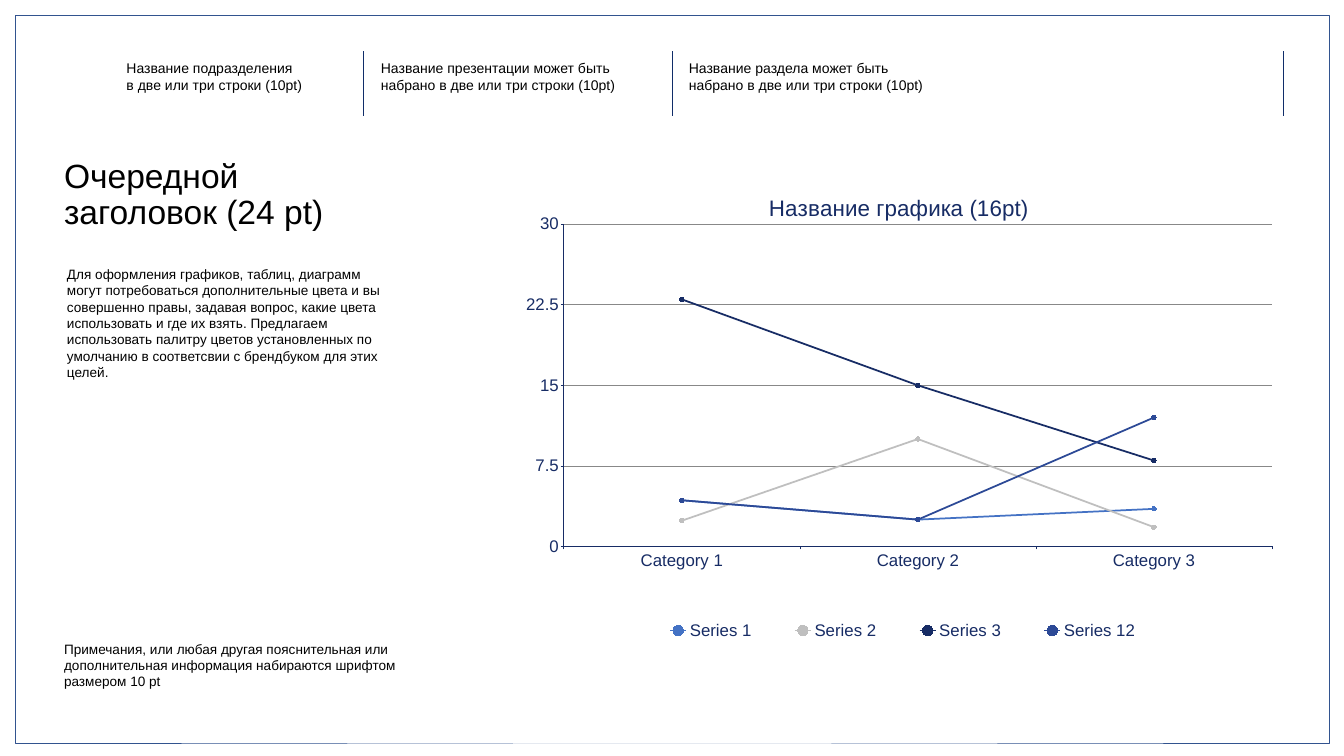
from lxml import etree
from pptx import Presentation
from pptx.chart.data import CategoryChartData
from pptx.dml.color import RGBColor
from pptx.enum.chart import (XL_CHART_TYPE as ChartType, XL_LEGEND_POSITION as LegendPosition,
                             XL_MARKER_STYLE as MarkerStyle, XL_TICK_LABEL_POSITION as LabelPosition,
                             XL_TICK_MARK as TickMark)
from pptx.enum.shapes import MSO_CONNECTOR as Connector, MSO_SHAPE as Shape
from pptx.enum.text import MSO_ANCHOR as Anchor, MSO_AUTO_SIZE as AutoSize, PP_ALIGN as Align
from pptx.oxml.ns import qn
from pptx.util import Inches, Pt

WIDTH, HEIGHT = Inches(26.67), Inches(15)
FONT = "Arial"
COLORS = {"paper": "FFFFFF", "text": "000000", "frame": "32538F", "rule": "102D69",
          "axis": "172C65", "grid": "888888"}
RULES = (27.03, 50.02, 95.5)
HEADERS = (
    (9.04, "Название подразделения\nв две или три строки (10pt)"),
    (27.97, "Название презентации может быть набрано в две или три строки (10pt)"),
    (50.88, "Название раздела может быть набрано в две или три строки (10pt)"),
)
TITLE = "Очередной\nзаголовок (24 pt)"
BODY = ("Для оформления графиков, таблиц, диаграмм могут потребоваться дополнительные цвета "
        "и вы совершенно правы, задавая вопрос, какие цвета использовать и где их взять. "
        "Предлагаем использовать палитру цветов установленных по умолчанию в соответсвии "
        "с брендбуком для этих целей.")
NOTE = ("Примечания, или любая другая пояснительная или дополнительная информация "
        "набираются шрифтом размером 10 pt")
CATEGORIES = ("Category 1", "Category 2", "Category 3")
SERIES = (
    ("Series 1", (4.3, 2.5, 3.5), "4472C4"),
    ("Series 2", (2.4, 10, 1.8), "BFBFBF"),
    ("Series 3", (23, 15, 8), "172C65"),
    ("Series 12", (4.3, 2.5, 12), "2C4996"),
)


def color(name):
    return RGBColor.from_string(COLORS.get(name, name))


def share(left, top, width, height):
    return (int(WIDTH * left / 100), int(HEIGHT * top / 100),
            int(WIDTH * width / 100), int(HEIGHT * height / 100))


def style_font(font, size, name):
    font.name, font.size, font.bold = FONT, Pt(size), False
    font.color.rgb = color(name)


def style_line(line, name, width):
    line.color.rgb = color(name)
    line.width = Pt(width)


def write_text(box, text, size, spacing=1.0):
    frame = box.text_frame
    frame.word_wrap = True
    frame.auto_size = AutoSize.NONE
    frame.vertical_anchor = Anchor.TOP
    frame.margin_left = frame.margin_right = Inches(0.1)
    frame.margin_top = frame.margin_bottom = Inches(0.1)
    para = frame.paragraphs[0]
    properties = para._p.get_or_add_pPr()
    properties.set("marL", "0")
    properties.set("indent", "0")
    etree.SubElement(properties, qn("a:buNone"))
    para.alignment = Align.LEFT
    para.line_spacing = spacing
    para.space_before = Pt(0)
    for number, line in enumerate(text.split("\n")):
        if number:
            para.add_line_break()
        span = para.add_run()
        span.text = line
        style_font(span.font, size, "text")


def fill_placeholder(box, area, text, size, spacing=1.0):
    box.left, box.top, box.width, box.height = share(*area)
    write_text(box, text, size, spacing)


def add_frame(page):
    frame = page.shapes.add_shape(Shape.RECTANGLE, *share(1.09, 2, 97.83, 96.27))
    frame.shadow.inherit = False
    frame.fill.solid()
    frame.fill.fore_color.rgb = color("paper")
    style_line(frame.line, "frame", 0.25)
    page.shapes._spTree.remove(frame._element)
    page.shapes._spTree.insert(2, frame._element)


def add_rule(page, position):
    left, top, _, bottom = share(position, 6.8, 0, 15.33)
    rule = page.shapes.add_connector(Connector.STRAIGHT, left, top, left, bottom)
    style_line(rule.line, "rule", 0.75)
    etree.SubElement(rule._element.spPr, qn("a:effectLst"))


def add_header(page, left, text):
    box = page.shapes.add_textbox(*share(left, 7.27, 18.49, 8))
    write_text(box, text, 20)


def set_layout(parent, index, area, inner=False):
    for old in parent.findall(qn("c:layout")):
        parent.remove(old)
    layout = etree.Element(qn("c:layout"))
    manual = etree.SubElement(layout, qn("c:manualLayout"))
    values = [("layoutTarget", "inner")] if inner else []
    values += [("xMode", "edge"), ("yMode", "edge")]
    values += list(zip("xywh", area))
    for tag, value in values:
        etree.SubElement(manual, qn("c:" + tag)).set("val", str(value))
    parent.insert(index, layout)


def style_axis(axis):
    axis.major_tick_mark = TickMark.OUTSIDE
    axis.minor_tick_mark = TickMark.NONE
    style_font(axis.tick_labels.font, 24, "axis")
    style_line(axis.format.line, "axis", 1)


def style_series(series, name):
    series.smooth = False
    style_line(series.format.line, name, 2.5)
    series.marker.style = MarkerStyle.CIRCLE
    series.marker.size = 6
    series.marker.format.fill.solid()
    series.marker.format.fill.fore_color.rgb = color(name)
    style_line(series.marker.format.line, name, 0.75)


def add_line_chart(page):
    data = CategoryChartData()
    data.categories = CATEGORIES
    for name, values, _ in SERIES:
        data.add_series(name, values)
    area = share(38.55, 23.47, 56.66, 61.8)
    chart = page.shapes.add_chart(ChartType.LINE_MARKERS, *area, data).chart
    style_font(chart.font, 10, "text")
    chart.has_title = True
    span = chart.chart_title.text_frame.paragraphs[0].add_run()
    span.text = "Название графика (16pt)"
    style_font(span.font, 32, "axis")
    chart.chart_title.include_in_layout = True
    chart.has_legend = True
    chart.legend.position = LegendPosition.BOTTOM
    chart.legend.include_in_layout = True
    style_font(chart.legend.font, 24, "axis")
    set_layout(chart.legend._element, 1, (0.15, 0.94, 0.71, 0.06))
    set_layout(chart._chartSpace.chart.plotArea, 0, (0.06, 0.1, 0.93, 0.69), inner=True)
    style_axis(chart.category_axis)
    chart.category_axis.tick_label_position = LabelPosition.LOW
    values = chart.value_axis
    style_axis(values)
    values.minimum_scale, values.maximum_scale, values.major_unit = 0, 30, 7.5
    values.tick_labels.number_format = "General"
    values.tick_labels.number_format_is_linked = False
    style_line(values.major_gridlines.format.line, "grid", 1)
    chart.plots[0].vary_by_categories = False
    for series, (_, _, name) in zip(chart.plots[0].series, SERIES):
        style_series(series, name)


def main():
    deck = Presentation()
    deck.slide_width, deck.slide_height = WIDTH, HEIGHT
    page = deck.slides.add_slide(deck.slide_layouts[3])
    add_frame(page)
    for position in RULES:
        add_rule(page, position)
    for left, text in HEADERS:
        add_header(page, left, text)
    title, body, note = page.placeholders
    fill_placeholder(title, (4.39, 20.4, 22.72, 11.53), TITLE, 48, 0.9)
    fill_placeholder(body, (4.61, 34.53, 24.52, 16.87), BODY, 19.4)
    fill_placeholder(note, (4.39, 84.07, 26.81, 8), NOTE, 19.4)
    add_line_chart(page)
    deck.save("out.pptx")


if __name__ == "__main__":
    main()
